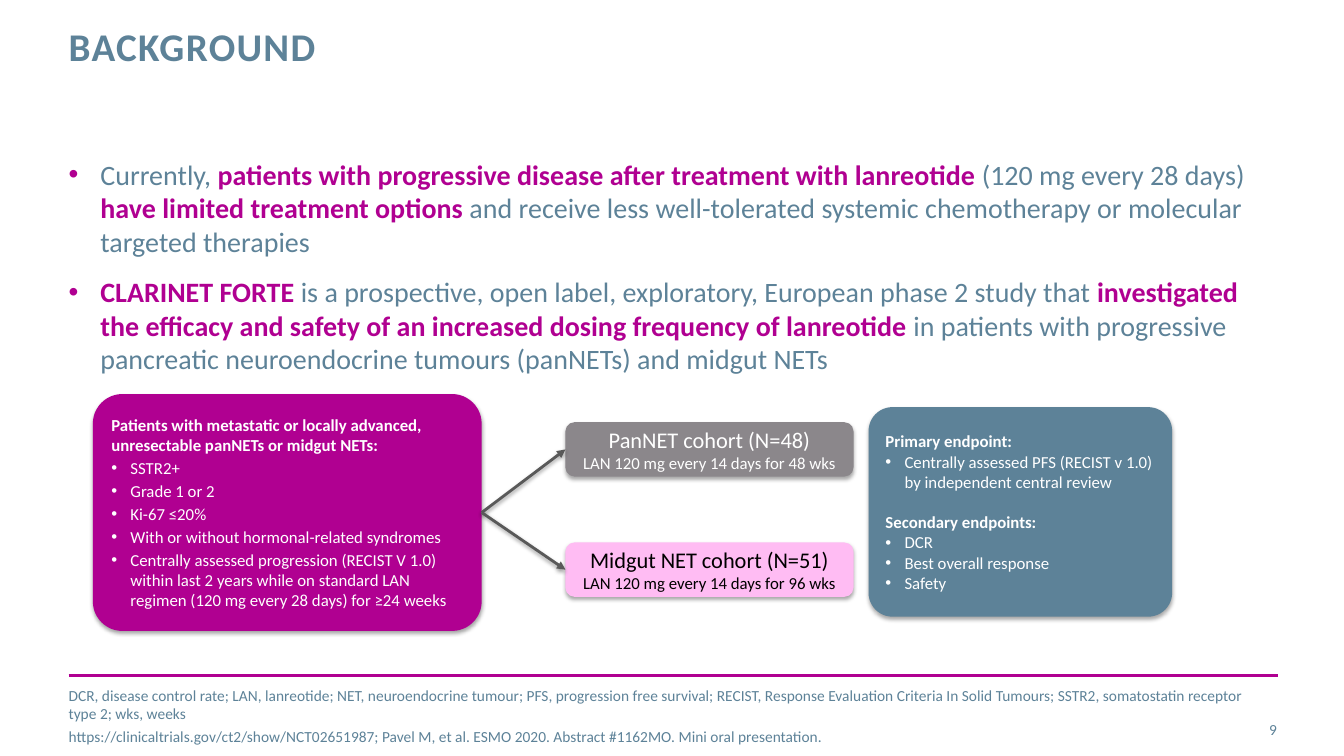
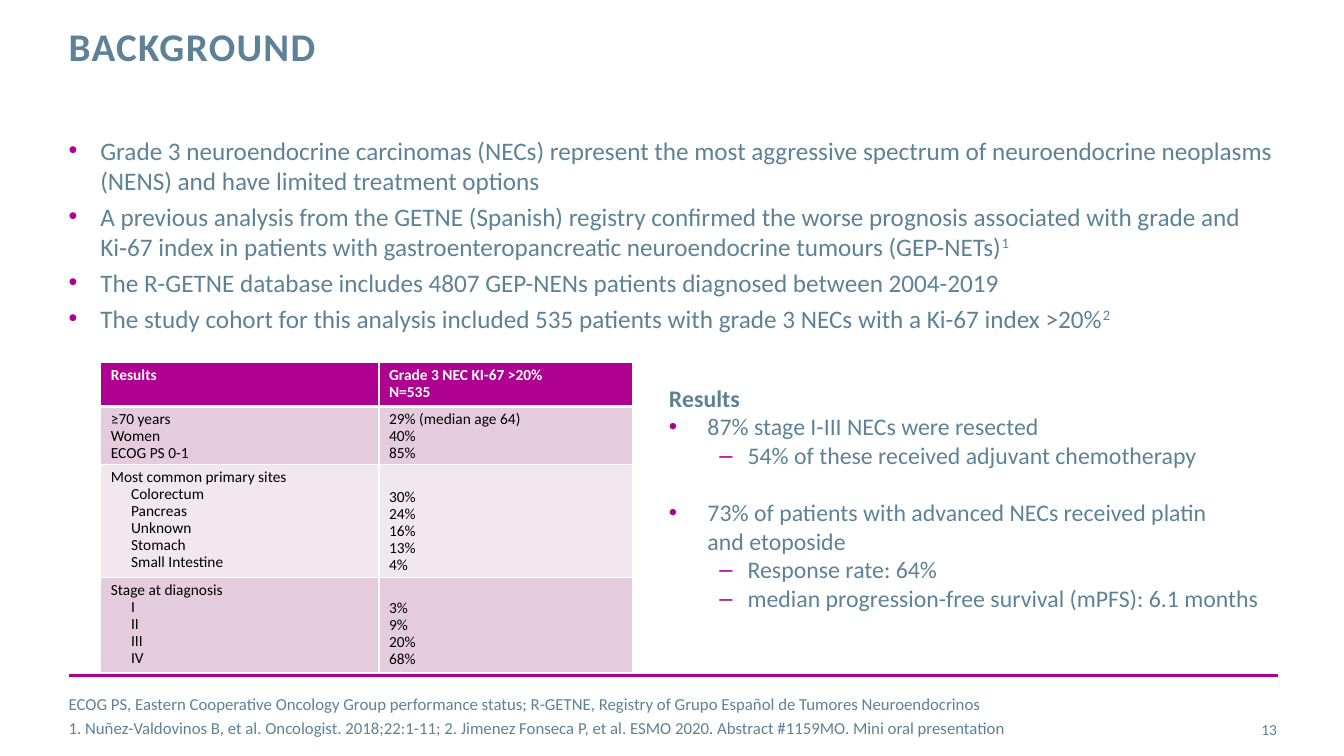
from dataclasses import dataclass
from typing import Optional, Union

from lxml.etree import SubElement
from pptx import Presentation
from pptx.dml.color import RGBColor
from pptx.enum.shapes import MSO_CONNECTOR as Conn, MSO_SHAPE as Shape
from pptx.enum.text import MSO_ANCHOR as Anchor, PP_ALIGN as Align
from pptx.oxml.ns import qn
from pptx.util import Cm, Pt


@dataclass(frozen=True)
class Theme:
    font: str = "Calibri"
    slate: str = "5D8298"
    magenta: str = "B00091"
    grey: str = "8B878B"
    pink: str = "FFBCF3"
    arrow: str = "595959"
    band_dark: str = "E4CCDC"
    band_light: str = "F2E7EE"
    white: str = "FFFFFF"
    black: str = "000000"
    title: float = 28
    lead: float = 20
    body: float = 18
    results: float = 17
    cohort: float = 16
    card: float = 12
    small: float = 11


T = Theme()
LEFT, WIDTH = 1.73, 30.48


@dataclass(frozen=True)
class Run:
    text: str
    color: Optional[str] = None
    bold: bool = False
    size: Optional[float] = None
    sup: bool = False


@dataclass(frozen=True)
class Para:
    """One paragraph; left and hang are in cm, before and after in points."""
    runs: tuple[Run, ...]
    bullet: str = ""
    bullet_color: Optional[str] = None
    left: float = 0
    hang: float = 0
    before: float = 0
    after: float = 0
    spacing: Union[float, Pt, None] = None
    align: Align = Align.LEFT


@dataclass(frozen=True)
class Box:
    x: float
    y: float
    w: float
    h: float

    def cm(self) -> tuple[Cm, ...]:
        return Cm(self.x), Cm(self.y), Cm(self.w), Cm(self.h)


@dataclass(frozen=True)
class Card:
    box: Box
    fill: str
    color: str
    paras: tuple[Para, ...]
    corner: float = 0.167


def rgb(value: str) -> RGBColor:
    return RGBColor.from_string(value)


def plain(text: str, bold: bool = False, **options) -> Para:
    return Para((Run(text, bold=bold),), **options)


def main_bullet(*runs: Run, before: float) -> Para:
    return Para(runs, "•", T.magenta, 0.8, 0.8, before)


def card_bullet(text: str, after: float = 0) -> Para:
    return plain(text, bullet="•", left=0.48, hang=0.48, after=after)


def result(text: str, before: float = 0) -> Para:
    return plain(text, bullet="•", bullet_color=T.magenta, left=0.97, hang=0.97, before=before)


def sub_result(text: str) -> Para:
    return plain(text, bullet="–", bullet_color=T.magenta, left=1.98, hang=0.71)


def strong(text: str) -> Run:
    return Run(text, T.magenta, True)


def set_bullet(p, para: Para) -> None:
    pPr = p._p.get_or_add_pPr()
    pPr.set("marL", str(Cm(para.left)))
    pPr.set("indent", str(-Cm(para.hang)))
    if para.bullet_color:
        SubElement(SubElement(pPr, qn("a:buClr")), qn("a:srgbClr"), val=para.bullet_color)
    if para.bullet:
        SubElement(pPr, qn("a:buFont"), typeface="Arial")
        SubElement(pPr, qn("a:buChar"), char=para.bullet)


def add_run(p, run: Run, size: float, color: str) -> None:
    for i, line in enumerate(run.text.split("\n")):
        if i:
            p.add_line_break()
        r = p.add_run()
        r.text = line
        r.font.name = T.font
        r.font.size = Pt(run.size or size)
        r.font.bold = run.bold
        r.font.color.rgb = rgb(run.color or color)
        if run.sup:
            r._r.get_or_add_rPr().set("baseline", "30000")


def write(tf, paras: tuple[Para, ...], size: float, color: str) -> None:
    for i, para in enumerate(paras):
        p = tf.add_paragraph() if i else tf.paragraphs[0]
        set_bullet(p, para)
        p.alignment = para.align
        p.space_before = Pt(para.before if i else 0)
        p.space_after = Pt(para.after)
        if para.spacing:
            p.line_spacing = para.spacing
        for run in para.runs:
            add_run(p, run, size, color)


def set_frame(tf, anchor: Anchor, inset_x: float, inset_y: float) -> None:
    tf.word_wrap = True
    tf.vertical_anchor = anchor
    tf.margin_left = tf.margin_right = Cm(inset_x)
    tf.margin_top = tf.margin_bottom = Cm(inset_y)


def add_text(s, box: Box, paras: tuple[Para, ...], size: float, anchor: Anchor = Anchor.TOP,
             inset_x: float = 0, inset_y: float = 0):
    sp = s.shapes.add_textbox(*box.cm())
    set_frame(sp.text_frame, anchor, inset_x, inset_y)
    write(sp.text_frame, paras, size, T.slate)
    return sp


def set_shadow(sp, alpha: int, dist: float) -> None:
    spPr = sp._element.spPr
    effects = spPr.find(qn("a:effectLst"))
    if effects is None:
        effects = SubElement(spPr, qn("a:effectLst"))
    shadow = SubElement(effects, qn("a:outerShdw"), blurRad=str(Pt(3.1)), dist=str(Pt(dist)),
                        dir="5400000", rotWithShape="0")
    clr = SubElement(shadow, qn("a:srgbClr"), val=T.black)
    SubElement(clr, qn("a:alpha"), val=str(alpha * 1000))


def add_card(s, card: Card):
    sp = s.shapes.add_shape(Shape.ROUNDED_RECTANGLE, *card.box.cm())
    sp.adjustments[0] = card.corner
    sp.fill.solid()
    sp.fill.fore_color.rgb = rgb(card.fill)
    sp.line.fill.background()
    sp.shadow.inherit = False
    set_shadow(sp, 35, 1.8)
    set_frame(sp.text_frame, Anchor.MIDDLE, 0.25, 0)
    write(sp.text_frame, card.paras, T.card, card.color)
    return sp


def add_line(s, color: str, x1: float = 0, y1: float = 0, x2: float = 0, y2: float = 0):
    line = s.shapes.add_connector(Conn.STRAIGHT, Cm(x1), Cm(y1), Cm(x2), Cm(y2))
    line.line.color.rgb = rgb(color)
    line.line.width = Pt(2)
    SubElement(line._element.spPr, qn("a:effectLst"))
    return line


def add_arrow(s, start, end) -> None:
    """Join the right side of start to the left side of end."""
    arrow = add_line(s, T.arrow)
    arrow.begin_connect(start, 3)
    arrow.end_connect(end, 1)
    SubElement(arrow.line._get_or_add_ln(), qn("a:tailEnd"), type="triangle")
    set_shadow(arrow, 38, 1.6)


def add_page(prs, number: str, notes: tuple[str, ...], note_size: float):
    """Add a slide with the shared title, rule, footnotes and page number."""
    s = prs.slides.add_slide(prs.slide_layouts[6])
    add_line(s, T.magenta, LEFT, 17.02, LEFT + WIDTH, 17.02)
    title = add_text(s, Box(LEFT, 0.69, 24.28, 2.24),
                     (plain("BACKGROUND", True, spacing=Pt(30)),), T.title)
    title.text_frame.paragraphs[0].runs[0]._r.get_or_add_rPr().set("spc", "100")
    add_text(s, Box(LEFT, 17.53, 29.82, 1.02),
             tuple(plain(note, before=3) for note in notes), note_size, Anchor.MIDDLE)
    add_text(s, Box(30, 17.86, 2.18, 1.02),
             (plain(number, align=Align.RIGHT),), T.small, Anchor.MIDDLE)
    return s


def cohort_card(y: float, fill: str, color: str, name: str, dose: str) -> Card:
    return Card(Box(14.25, y, 7.26, 1.37), fill, color,
                (Para((Run(name, size=T.cohort),), align=Align.CENTER),
                 plain(dose, align=Align.CENTER)))


def study_slide(prs) -> None:
    s = add_page(prs, "9", (
        "DCR, disease control rate; LAN, lanreotide; NET, neuroendocrine tumour; PFS, progression free survival; "
        "RECIST, Response Evaluation Criteria In Solid Tumours; SSTR2, somatostatin receptor type 2; wks, weeks",
        "https://clinicaltrials.gov/ct2/show/NCT02651987; Pavel M, et al. ESMO 2020. "
        "Abstract #1162MO. Mini oral presentation."), T.small)
    add_text(s, Box(LEFT, 3.96, WIDTH, 5.6), (
        main_bullet(Run("Currently, "),
                    strong("patients with progressive disease after treatment with lanreotide "),
                    Run("(120 mg every 28 days) "), strong("have limited treatment options "),
                    Run("and receive less well-tolerated systemic chemotherapy or molecular targeted therapies"),
                    before=12),
        main_bullet(strong("CLARINET FORTE "),
                    Run("is a prospective, open label, exploratory, European phase 2 study that "),
                    strong("investigated the efficacy and safety of an increased dosing frequency of lanreotide"),
                    Run(" in patients with progressive pancreatic neuroendocrine tumours (panNETs) and midgut NETs"),
                    before=12)), T.lead)
    criteria = (
        "SSTR2+", "Grade 1 or 2", "Ki-67 ≤20%", "With or without hormonal-related syndromes",
        "Centrally assessed progression (RECIST V 1.0) within last 2 years while on standard LAN "
        "regimen (120 mg every 28 days) for ≥24 weeks")
    patients = add_card(s, Card(Box(2.34, 9.93, 9.8, 5.97), T.magenta, T.white, (
        plain("Patients with metastatic or locally advanced, unresectable panNETs or midgut NETs:", True, after=2),
        *(card_bullet(text, 2) for text in criteria)), 0.125))
    add_card(s, Card(Box(21.89, 10.26, 7.65, 5.28), T.slate, T.white, (
        plain("Primary endpoint:", True),
        card_bullet("Centrally assessed PFS (RECIST v 1.0) by independent central review"),
        plain("Secondary endpoints:", True, before=14.6),
        *map(card_bullet, ("DCR", "Best overall response", "Safety"))), 0.114))
    for cohort in (
            cohort_card(10.64, T.grey, T.white, "PanNET cohort (N=48)", "LAN 120 mg every 14 days for 48 wks"),
            cohort_card(13.67, T.pink, T.black, "Midgut NET cohort (N=51)", "LAN 120 mg every 14 days for 96 wks")):
        add_arrow(s, patients, add_card(s, cohort))


@dataclass(frozen=True)
class TableRow:
    height: float
    fill: str
    labels: tuple[str, ...]
    values: tuple[str, ...]
    header: bool = False
    grouped: bool = False


def set_borders(cell, bottom: float) -> None:
    tcPr = cell._tc.get_or_add_tcPr()
    for side, width in (("L", 1), ("R", 1), ("T", 1), ("B", bottom)):
        ln = SubElement(tcPr, qn("a:ln" + side), w=str(Pt(width)))
        SubElement(SubElement(ln, qn("a:solidFill")), qn("a:srgbClr"), val=T.white)


def add_results_table(s, box: Box, widths: tuple[float, ...], rows: tuple[TableRow, ...]) -> None:
    table = s.shapes.add_table(len(rows), len(widths), *box.cm()).table
    table.first_row = table.horz_banding = False
    for column, width in zip(table.columns, widths):
        column.width = Cm(width)
    for i, row in enumerate(rows):
        table.rows[i].height = Cm(row.height)
        for j, lines in enumerate((row.labels, row.values)):
            cell = table.cell(i, j)
            set_borders(cell, 3 if row.header else 1)
            cell.fill.solid()
            cell.fill.fore_color.rgb = rgb(row.fill)
            cell.margin_top = cell.margin_bottom = Cm(0.13 if row.header else 0.1)
            cell.vertical_anchor = Anchor.BOTTOM if row.grouped and j else Anchor.TOP
            paras = tuple(plain(text, row.header, spacing=0.9,
                                left=0.51 if row.grouped and not j and k else 0)
                          for k, text in enumerate(lines))
            write(cell.text_frame, paras, T.small, T.white if row.header else T.black)


def registry_slide(prs) -> None:
    s = add_page(prs, "13", (
        "ECOG PS, Eastern Cooperative Oncology Group performance status; "
        "R-GETNE, Registry of Grupo Español de Tumores Neuroendocrinos",
        "1. Nuñez-Valdovinos B, et al. Oncologist. 2018;22:1-11; 2. Jimenez Fonseca P, et al. "
        "ESMO 2020. Abstract #1159MO. Mini oral presentation"), T.card)
    points = (
        ("Grade 3 neuroendocrine carcinomas (NECs) represent the most aggressive spectrum of "
         "neuroendocrine neoplasms (NENS) and have limited treatment options", ""),
        ("A previous analysis from the GETNE (Spanish) registry confirmed the worse prognosis associated with "
         "grade and Ki‑67 index in patients with gastroenteropancreatic neuroendocrine tumours (GEP-NETs)", "1"),
        ("The R-GETNE database includes 4807 GEP-NENs patients diagnosed between 2004-2019", ""),
        ("The study cohort for this analysis included 535 patients with grade 3 NECs with a Ki-67 index >20%", "2"))
    add_text(s, Box(LEFT, 3.4, WIDTH, 5.16), tuple(
        main_bullet(Run(text), *([Run(ref, sup=True)] if ref else []), before=4)
        for text, ref in points), T.body)
    add_results_table(s, Box(2.54, 9.12, 13.41, 7.82), (7.01, 6.4), (
        TableRow(1.12, T.magenta, ("Results",), ("Grade 3 NEC KI-67 >20%", "N=535"), header=True),
        TableRow(1.47, T.band_dark, ("≥70 years", "Women", "ECOG PS 0-1"),
                 ("29% (median age 64)", "40%", "85%")),
        TableRow(2.85, T.band_light,
                 ("Most common primary sites", "Colorectum", "Pancreas", "Unknown", "Stomach", "Small Intestine"),
                 ("30%", "24%", "16%", "13%", "4%"), grouped=True),
        TableRow(2.38, T.band_dark, ("Stage at diagnosis", "I", "II", "III", "IV"),
                 ("3%", "9%", "20%", "68%"), grouped=True)))
    add_text(s, Box(16.61, 9.53, 16.31, 6.07), (
        plain("Results", True),
        result("87% stage I-III NECs were resected"),
        sub_result("54% of these received adjuvant chemotherapy"),
        result("73% of patients with advanced NECs received platin\nand etoposide", 20.7),
        sub_result("Response rate: 64%"),
        sub_result("median progression-free survival (mPFS): 6.1 months")),
        T.results, inset_x=0.25, inset_y=0.13)


def main() -> None:
    prs = Presentation()
    prs.slide_width, prs.slide_height = Cm(33.87), Cm(19.05)
    study_slide(prs)
    registry_slide(prs)
    prs.save("out.pptx")


if __name__ == "__main__":
    main()
